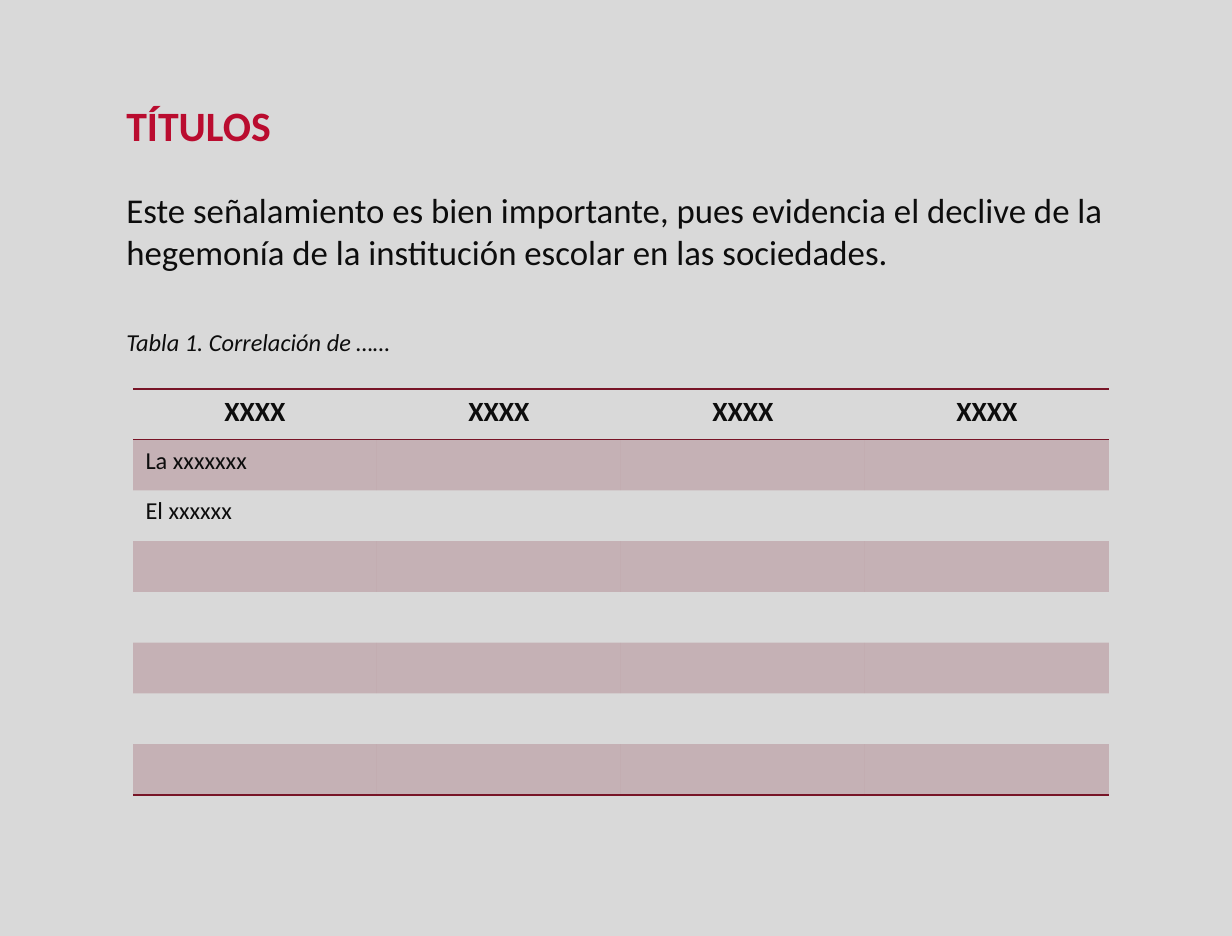
from dataclasses import dataclass

from lxml.etree import SubElement
from pptx import Presentation
from pptx.dml.color import RGBColor
from pptx.enum.shapes import MSO_SHAPE as Shape
from pptx.enum.text import PP_ALIGN as Align
from pptx.oxml.ns import qn
from pptx.util import Pt

EMU_PER_PX = 7303
SLIDE_WIDTH, SLIDE_HEIGHT = 1232, 936
PLAIN_TABLE_STYLE = "{2D5ABB26-0587-4C30-8999-92F81FD0307C}"


@dataclass(frozen=True)
class Theme:
    font: str = "Calibri"
    paper: str = "D9D9D9"
    ink: str = "0D0D0D"
    title: str = "BA0C2F"
    wine: str = "781527"
    band_opacity: int = 20
    rule_width: int = 1
    title_size: int = 24
    body_size: int = 20
    header_size: int = 16
    small_size: int = 14


def px(*lengths):
    return [length * EMU_PER_PX for length in lengths]


class SlideBuilder:
    def __init__(self, deck, theme):
        self.theme = theme
        self.page = deck.slides.add_slide(deck.slide_layouts[6])

    def backdrop(self):
        panel = self.page.shapes.add_shape(
            Shape.RECTANGLE, *px(0, 0, SLIDE_WIDTH, SLIDE_HEIGHT))
        panel.shadow.inherit = False
        panel.fill.solid()
        panel.fill.fore_color.rgb = RGBColor.from_string(self.theme.paper)
        panel.line.fill.background()

    def add_span(self, frame, words, size, color=None, **styles):
        span = frame.paragraphs[0].add_run()
        span.text = words
        span.font.color.rgb = RGBColor.from_string(color or self.theme.ink)
        formats = {"name": self.theme.font, "size": Pt(size), **styles}
        for name, value in formats.items():
            setattr(span.font, name, value)

    def text(self, place, words, size, wrap=True, **styles):
        box = self.page.shapes.add_textbox(*px(*place))
        box.text_frame.word_wrap = wrap
        self.add_span(box.text_frame, words, size, **styles)

    def table(self, place, header, body):
        rows = [header, *body]
        frame = self.page.shapes.add_table(len(rows), len(header), *px(*place))
        grid = frame.table
        grid.first_row = grid.horz_banding = False
        style = next(frame.element.iter(qn("a:tableStyleId")))
        style.text = PLAIN_TABLE_STYLE

        for row, entries in enumerate(rows):
            edges = []
            if row == 0:
                edges = ["a:lnT", "a:lnB"]
            elif row == len(rows) - 1:
                edges = ["a:lnB"]
            for column, words in enumerate(entries):
                cell = grid.cell(row, column)
                for edge in edges:
                    self.rule(cell, edge)
                self.shade(cell, banded=row % 2 == 1)
                if row == 0:
                    cell.text_frame.paragraphs[0].alignment = Align.CENTER
                    self.add_span(cell.text_frame, words, self.theme.header_size, bold=True)
                elif words:
                    self.add_span(cell.text_frame, words, self.theme.small_size)

    def rule(self, cell, edge):
        """Draw one cell border; borders must be added before the fill."""
        properties = cell._tc.get_or_add_tcPr()
        line = SubElement(properties, qn(edge), w=str(Pt(self.theme.rule_width)))
        fill = SubElement(line, qn("a:solidFill"))
        SubElement(fill, qn("a:srgbClr"), val=self.theme.wine)

    def shade(self, cell, banded):
        if not banded:
            cell.fill.background()
            return
        cell.fill.solid()
        cell.fill.fore_color.rgb = RGBColor.from_string(self.theme.wine)
        color = next(cell._tc.tcPr.find(qn("a:solidFill")).iter(qn("a:srgbClr")))
        SubElement(color, qn("a:alpha"), val=str(self.theme.band_opacity * 1000))


def main():
    deck = Presentation()
    deck.slide_width, deck.slide_height = px(SLIDE_WIDTH, SLIDE_HEIGHT)
    theme = Theme()
    slide = SlideBuilder(deck, theme)

    slide.backdrop()
    slide.text((114, 94, 190, 63), "TÍTULOS", theme.title_size,
               wrap=False, color=theme.title, bold=True)
    slide.text((114, 183, 1025, 97),
               "Este señalamiento es bien importante, pues evidencia el declive "
               "de la hegemonía de la institución escolar en las sociedades.",
               theme.body_size)
    slide.text((114, 321, 995, 42), "Tabla 1. Correlación de ……",
               theme.small_size, italic=True)

    columns, body_rows = 4, 7
    labels = ["La xxxxxxx", "El xxxxxx"]
    labels += [""] * (body_rows - len(labels))
    body = [[label] + [""] * (columns - 1) for label in labels]
    slide.table((133, 389, 976, 406), ["XXXX"] * columns, body)

    deck.save("out.pptx")


if __name__ == "__main__":
    main()
